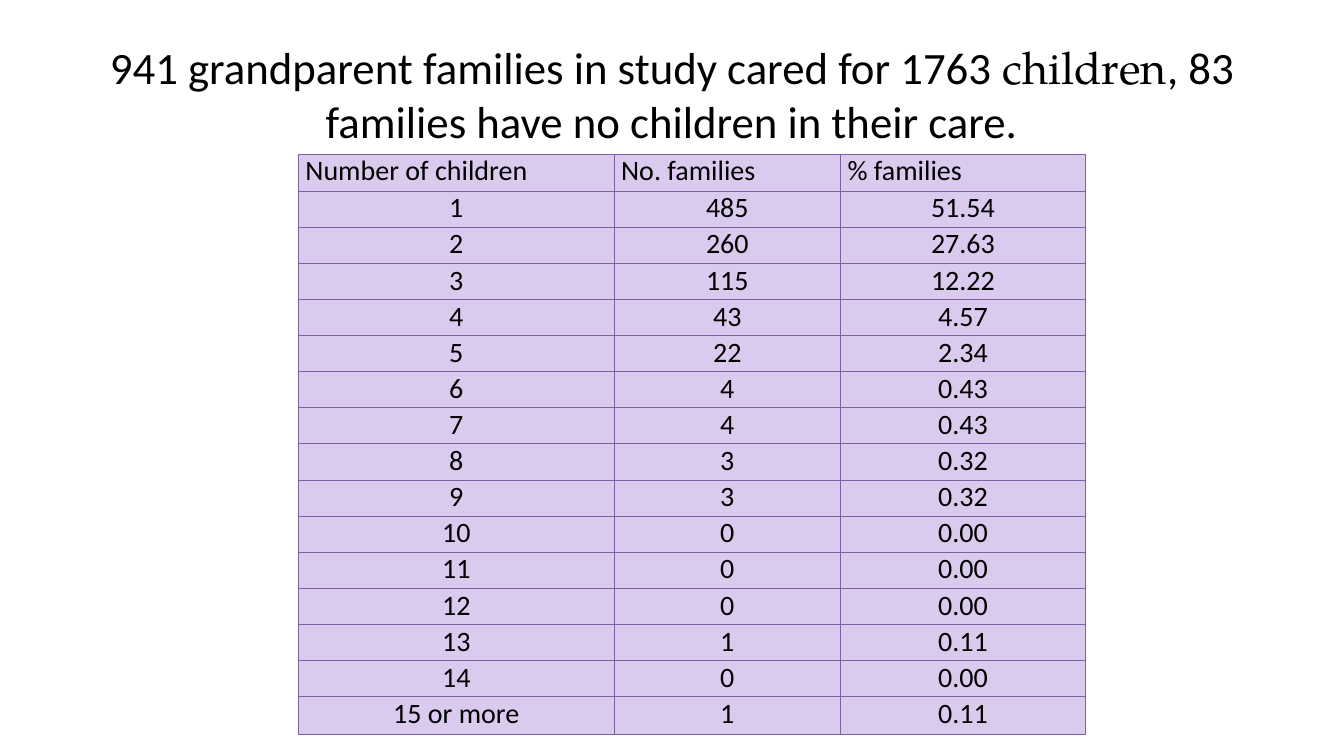
"""Build a slide tabulating how many children each grandparent family cares for."""
from lxml import etree
from pptx import Presentation
from pptx.dml.color import RGBColor
from pptx.enum import text
from pptx.oxml import ns
from pptx.util import Pt

COLORS = {"text": "000000", "cell": "D9CAEE", "border": "7D60A0"}
FONT = "Calibri"
FAMILIES = [485, 260, 115, 43, 22, 4, 4, 3, 3, 0, 0, 0, 1, 0, 1]
COLUMN_WIDTHS = [225.5, 161.7, 175]
ROW_HEIGHTS = [26.5] + [25.8] * 14 + [27]


def style_paragraph(paragraph, size, alignment):
    paragraph.alignment = alignment
    paragraph.font.size = Pt(size)
    paragraph.font.name = FONT
    paragraph.font.bold = False
    paragraph.font.color.rgb = RGBColor.from_string(COLORS["text"])


def add_borders(cell):
    properties = cell._tc.get_or_add_tcPr()
    for position, side in enumerate(("lnL", "lnR", "lnT", "lnB")):
        line = etree.Element(ns.qn(f"a:{side}"), w=str(Pt(0.75)))
        fill = etree.SubElement(line, ns.qn("a:solidFill"))
        etree.SubElement(fill, ns.qn("a:srgbClr"), val=COLORS["border"])
        properties.insert(position, line)


presentation = Presentation()
presentation.slide_width, presentation.slide_height = Pt(960), Pt(540)
slide = presentation.slides.add_slide(presentation.slide_layouts[6])

title = slide.shapes.add_textbox(Pt(48), Pt(21.6), Pt(864), Pt(90))
title.text_frame.word_wrap = True
title.text_frame.vertical_anchor = text.MSO_ANCHOR.MIDDLE
paragraph = title.text_frame.paragraphs[0]
style_paragraph(paragraph, 32, text.PP_ALIGN.CENTER)
for words, font in [
    ("941 grandparent families in study cared for 1763 ", FONT),
    ("children", "TeX Gyre Pagella"),
    (", 83 families have no children in their care.", FONT),
]:
    run = paragraph.add_run()
    run.text = words
    run.font.name = font

rows = [("Number of children", "No. families", "% families")]
for children, count in enumerate(FAMILIES, start=1):
    label = "15 or more" if children == len(FAMILIES) else str(children)
    rows.append((label, str(count), f"{100 * count / sum(FAMILIES):.2f}"))

table = slide.shapes.add_table(
    len(rows), len(COLUMN_WIDTHS), Pt(213.2), Pt(110),
    Pt(sum(COLUMN_WIDTHS)), Pt(sum(ROW_HEIGHTS)),
).table
table.horz_banding = False
for column, width in zip(table.columns, COLUMN_WIDTHS):
    column.width = Pt(width)
for row_index, (values, height) in enumerate(zip(rows, ROW_HEIGHTS)):
    table.rows[row_index].height = Pt(height)
    alignment = text.PP_ALIGN.CENTER if row_index else text.PP_ALIGN.LEFT
    for column_index, value in enumerate(values):
        cell = table.cell(row_index, column_index)
        cell.text = value
        cell.margin_left = cell.margin_right = Pt(5)
        cell.margin_top = cell.margin_bottom = Pt(0)
        cell.fill.solid()
        cell.fill.fore_color.rgb = RGBColor.from_string(COLORS["cell"])
        style_paragraph(cell.text_frame.paragraphs[0], 20, alignment)
        add_borders(cell)

presentation.save("out.pptx")
